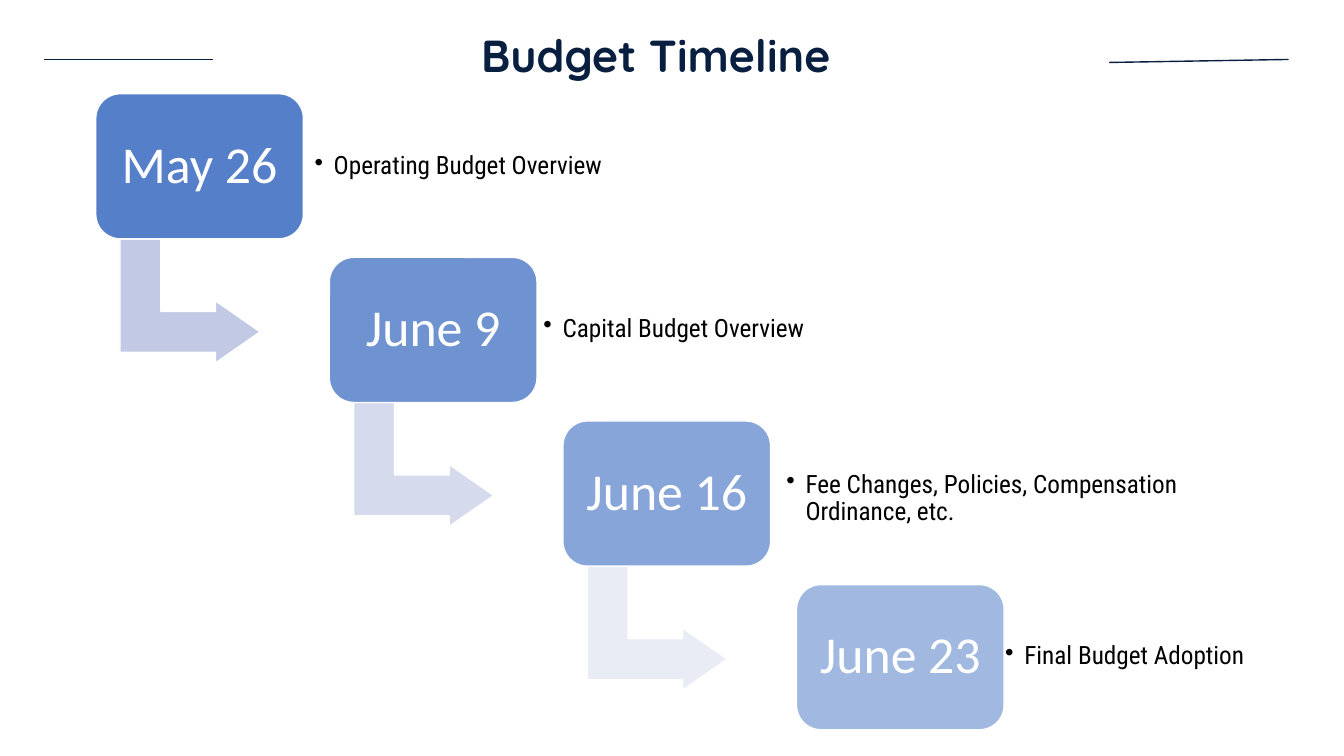
from pptx import Presentation
from pptx.dml.color import RGBColor
from pptx.enum import shapes, text
from pptx.oxml.ns import qn
from pptx.util import Inches, Pt
from lxml import etree

NAVY = RGBColor(0x09, 0x1F, 0x40)
BLUE = RGBColor(0x44, 0x72, 0xC4)
WHITE = RGBColor(0xFF, 0xFF, 0xFF)
BLACK = RGBColor(0x00, 0x00, 0x00)
ARROW_TINTS = [RGBColor(0xC1, 0xC9, 0xE4), RGBColor(0xD5, 0xDA, 0xEC),
               RGBColor(0xE9, 0xEB, 0xF5)]

# Date, box opacity in percent, description, and its left, top, width, height
STEPS = [
    ("May 26", 90, "Operating Budget Overview", (3.05, 1.07, 4.03, 1.17)),
    ("June 9", 77, "Capital Budget Overview", (5.32, 2.68, 5.56, 1.17)),
    ("June 16", 63, "Fee Changes, Policies, Compensation Ordinance, etc.",
     (7.73, 4.22, 4.07, 1.45)),
    ("June 23", 50, "Final Budget Adoption", (9.9, 5.93, 3.03, 1.17)),
]
FIRST_LEFT, LAST_LEFT = 0.95, 7.9
FIRST_TOP, LAST_TOP = 0.93, 5.8


def add_block(kind, left, top, width, height, color, adjustments):
    block = page.shapes.add_shape(kind, Inches(left), Inches(top),
                                  Inches(width), Inches(height))
    block.shadow.inherit = False
    block.fill.solid()
    block.fill.fore_color.rgb = color
    block.line.color.rgb = WHITE
    block.line.width = Pt(1)
    for index, value in enumerate(adjustments):
        block.adjustments[index] = value
    return block


def write_text(shape, words, inset, font_name, size, color):
    frame = shape.text_frame
    frame.word_wrap = True
    frame.vertical_anchor = text.MSO_ANCHOR.MIDDLE
    frame.margin_left = frame.margin_right = Inches(inset)
    frame.margin_top = frame.margin_bottom = Inches(inset)
    para = frame.paragraphs[0]
    para.text = words
    para.line_spacing = 0.9
    para.font.name = font_name
    para.font.size = Pt(size)
    para.font.color.rgb = color
    return para


deck = Presentation()
deck.slide_width, deck.slide_height = Inches(13.33), Inches(7.5)
page = deck.slides.add_slide(deck.slide_layouts[5])

# Title
title = page.shapes.title
title.left, title.top = Inches(1.56), Inches(0.22)
title.width, title.height = Inches(9.89), Inches(0.64)
para = write_text(title, "Budget Timeline", 0.05, "Quicksand", 32, NAVY)
para.alignment = text.PP_ALIGN.CENTER
para.line_spacing = 1.0
para.font.bold = True

# Rules on both sides of the title
for x1, y1, x2, y2 in [(11, 0.62, 12.78, 0.59), (0.44, 0.59, 2.11, 0.59)]:
    rule = page.shapes.add_connector(shapes.MSO_CONNECTOR.STRAIGHT, Inches(x1),
                                     Inches(y1), Inches(x2), Inches(y2))
    rule.line.color.rgb = NAVY
    rule.line.width = Pt(1)
    etree.SubElement(rule._element.spPr, qn("a:effectLst"))

# Staircase of dates
for i, (date, opacity, description, place) in enumerate(STEPS):
    progress = i / (len(STEPS) - 1)
    left = FIRST_LEFT + (LAST_LEFT - FIRST_LEFT) * progress
    top = FIRST_TOP + (LAST_TOP - FIRST_TOP) * progress

    # Arrow down to the next date
    if i < len(ARROW_TINTS):
        arrow = add_block(shapes.MSO_SHAPE.BENT_UP_ARROW, left + 0.32, top + 1.36,
                          1.23, 1.39, ARROW_TINTS[i], [0.33, 0.25, 0.36])
        arrow.rotation = 90

    # Date box with a translucent fill
    box = add_block(shapes.MSO_SHAPE.ROUNDED_RECTANGLE, left, top, 2.06, 1.44,
                    BLUE, [0.17])
    tint = box._element.spPr.find(qn("a:solidFill")).find(qn("a:srgbClr"))
    etree.SubElement(tint, qn("a:alpha"), val=str(opacity * 1000))
    para = write_text(box, date, 0.15, "Calibri", 37, WHITE)
    para.alignment = text.PP_ALIGN.CENTER

    # Bulleted description
    note = page.shapes.add_textbox(*[Inches(length) for length in place])
    para = write_text(note, description, 0.07, "Roboto Condensed", 18, BLACK)
    properties = para._p.get_or_add_pPr()
    properties.set("marL", str(Inches(0.19)))
    properties.set("indent", str(-Inches(0.19)))
    bullet = properties.makeelement(qn("a:buChar"), {"char": "•"})
    properties.insert_element_before(bullet, "a:tabLst", "a:defRPr", "a:extLst")

deck.save("out.pptx")
